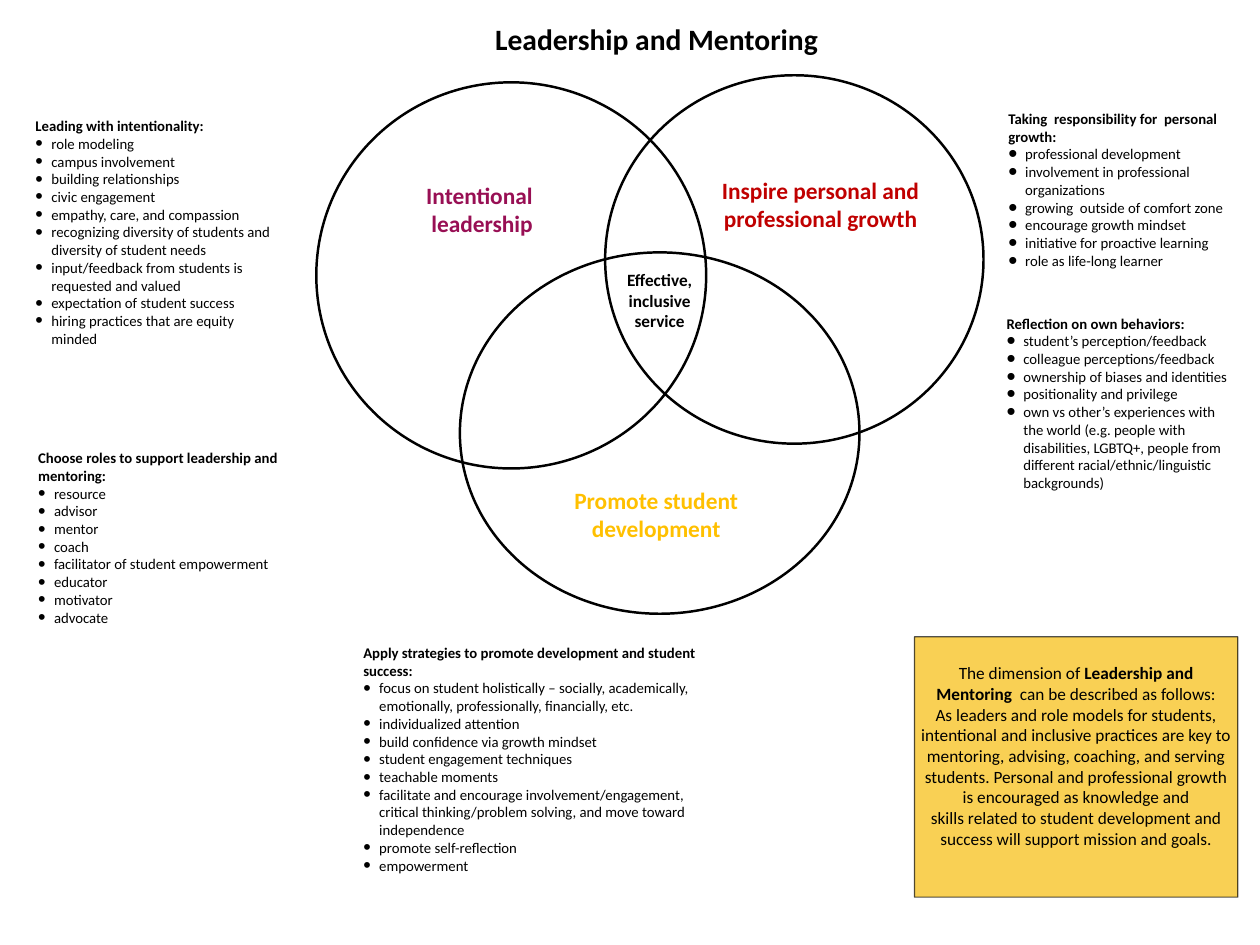
from lxml import etree
from pptx import Presentation
from pptx.dml.color import RGBColor
from pptx.enum.shapes import MSO_SHAPE
from pptx.enum.text import MSO_ANCHOR, PP_ALIGN
from pptx.oxml.ns import qn
from pptx.util import Inches, Pt

OVAL, RECTANGLE = MSO_SHAPE.OVAL, MSO_SHAPE.RECTANGLE
TOP, MIDDLE = MSO_ANCHOR.TOP, MSO_ANCHOR.MIDDLE
CENTER, LEFT = PP_ALIGN.CENTER, PP_ALIGN.LEFT
COLORS = {"black": "000000", "plum": "980F54", "red": "C00000", "gold": "FFC000", "note": "F7BA01"}
INSET = 0.06
NOTE_ALPHA = "67000"


def fill_frame(shape, lines, size, color="black", bold=False, align=CENTER, anchor=MIDDLE):
    """Write one paragraph per line and return the paragraphs."""
    frame = shape.text_frame
    frame.word_wrap = True
    frame.vertical_anchor = anchor
    frame.margin_left = frame.margin_right = Inches(INSET)
    frame.margin_top = frame.margin_bottom = Inches(INSET)
    for _ in lines[1:]:
        frame.add_paragraph()
    for paragraph, line in zip(frame.paragraphs, lines):
        paragraph.text = line
        paragraph.alignment = align
        paragraph.font.name = "Calibri"
        paragraph.font.size = Pt(size)
        paragraph.font.bold = bold
        paragraph.font.color.rgb = RGBColor.from_string(COLORS[color])
    return frame.paragraphs


def add_bullet(paragraph, indent, percent):
    properties = paragraph._p.get_or_add_pPr()
    properties.set("marL", str(Inches(indent)))
    properties.set("indent", str(-Inches(indent)))
    etree.SubElement(properties, qn("a:buSzPct")).set("val", str(percent * 1000))
    etree.SubElement(properties, qn("a:buFont")).set("typeface", "Arial")
    etree.SubElement(properties, qn("a:buChar")).set("char", "•")
    # The schema wants default run properties after the bullet
    properties.append(properties.find(qn("a:defRPr")))


presentation = Presentation()
presentation.slide_width, presentation.slide_height = Inches(14.22), Inches(10.67)
slide = presentation.slides.add_slide(presentation.slide_layouts[6])

# Venn circles
for box in [(3.57, 0.93, 4.4, 4.36), (6.83, 0.85, 4.27, 4.16), (5.19, 2.85, 4.51, 4.08)]:
    circle = slide.shapes.add_shape(OVAL, *map(Inches, box))
    circle.shadow.inherit = False
    circle.fill.background()
    circle.line.color.rgb = RGBColor.from_string(COLORS["black"])
    circle.line.width = Pt(2)

# Title and circle labels
labels = [
    ((5.21, 0.18, 4.4, 0.52), ["Leadership and Mentoring"], 24, "black"),
    ((6.78, 2.98, 1.33, 0.82), ["Effective,", "inclusive", "service"], 14, "black"),
    ((4.25, 1.99, 2.38, 0.75), ["Intentional ", "leadership"], 19, "plum"),
    ((7.76, 1.93, 3, 0.75), ["Inspire personal and professional growth"], 19, "red"),
    ((6.34, 5.43, 2.13, 0.75), ["Promote student development"], 19, "gold"),
]
for box, lines, size, color in labels:
    label = slide.shapes.add_textbox(*map(Inches, box))
    fill_frame(label, lines, size, color, bold=True)

# Bulleted lists: box, indent, bullet size, heading and items
SMALL_BULLET, LARGE_BULLET = (0.18, 145), (0.19, 175)
bullet_lists = [
    ((0.34, 1.26, 2.79, 2.74), SMALL_BULLET, [
        "Leading with intentionality:",
        "role modeling",
        "campus involvement",
        "building relationships",
        "civic engagement",
        "empathy, care, and compassion",
        "recognizing diversity of students and diversity of student needs",
        "input/feedback from students is requested and valued",
        "expectation of student success",
        "hiring practices that are equity minded",
    ]),
    ((0.37, 5.01, 3, 2.33), SMALL_BULLET, [
        "Choose roles to support leadership and mentoring:",
        "resource",
        "advisor",
        "mentor",
        "coach",
        "facilitator of student empowerment",
        "educator",
        "motivator",
        "advocate",
    ]),
    ((4.04, 7.21, 4.07, 2.94), SMALL_BULLET, [
        "Apply strategies to promote development and student success:",
        "focus on student holistically – socially, academically, emotionally, "
        "professionally, financially, etc.",
        "individualized attention",
        "build confidence via growth mindset",
        "student engagement techniques",
        "teachable moments",
        "facilitate and encourage involvement/engagement, critical thinking/problem "
        "solving, and move toward independence",
        "promote self-reflection",
        "empowerment",
    ]),
    ((11.32, 1.18, 2.79, 1.93), LARGE_BULLET, [
        "Taking  responsibility for  personal growth:",
        "professional development",
        "involvement in professional organizations",
        "growing  outside of comfort zone",
        "encourage growth mindset",
        "initiative for proactive learning",
        "role as life-long learner",
    ]),
    ((11.3, 3.49, 2.7, 2.13), LARGE_BULLET, [
        "Reflection on own behaviors:",
        "student’s perception/feedback",
        "colleague perceptions/feedback",
        "ownership of biases and identities",
        "positionality and privilege",
        "own vs other’s experiences with the world (e.g. people with disabilities, "
        "LGBTQ+, people from different racial/ethnic/linguistic backgrounds)",
    ]),
]
for box, (indent, percent), lines in bullet_lists:
    text_box = slide.shapes.add_textbox(*map(Inches, box))
    heading, *items = fill_frame(text_box, lines, 12, align=LEFT, anchor=TOP)
    heading.font.bold = True
    for item in items:
        add_bullet(item, indent, percent)

# Description note
note = slide.shapes.add_shape(RECTANGLE, Inches(10.32), Inches(7.19), Inches(3.65), Inches(2.94))
note.shadow.inherit = False
note.line.width = Pt(1)
for fill, color in [(note.fill, "note"), (note.line.fill, "black")]:
    fill.solid()
    fill.fore_color.rgb = RGBColor.from_string(COLORS[color])
for rgb in note._element.spPr.iter(qn("a:srgbClr")):
    etree.SubElement(rgb, qn("a:alpha")).set("val", NOTE_ALPHA)

intro, description = fill_frame(note, [
    "The dimension of ",
    "As leaders and role models for students, intentional and inclusive practices are key to "
    "mentoring, advising, coaching, and serving students. Personal and professional growth is "
    "encouraged as knowledge and\vskills related to student development and success will "
    "support mission and goals.",
], 14, anchor=TOP)
note.text_frame.margin_top = Inches(0.29)
for text, bold in [("Leadership and", True), ("Mentoring ", True), (" can be described as follows:", False)]:
    if text.startswith("Mentoring"):
        intro.add_line_break()
    run = intro.add_run()
    run.text = text
    run.font.bold = bold

presentation.save("out.pptx")
